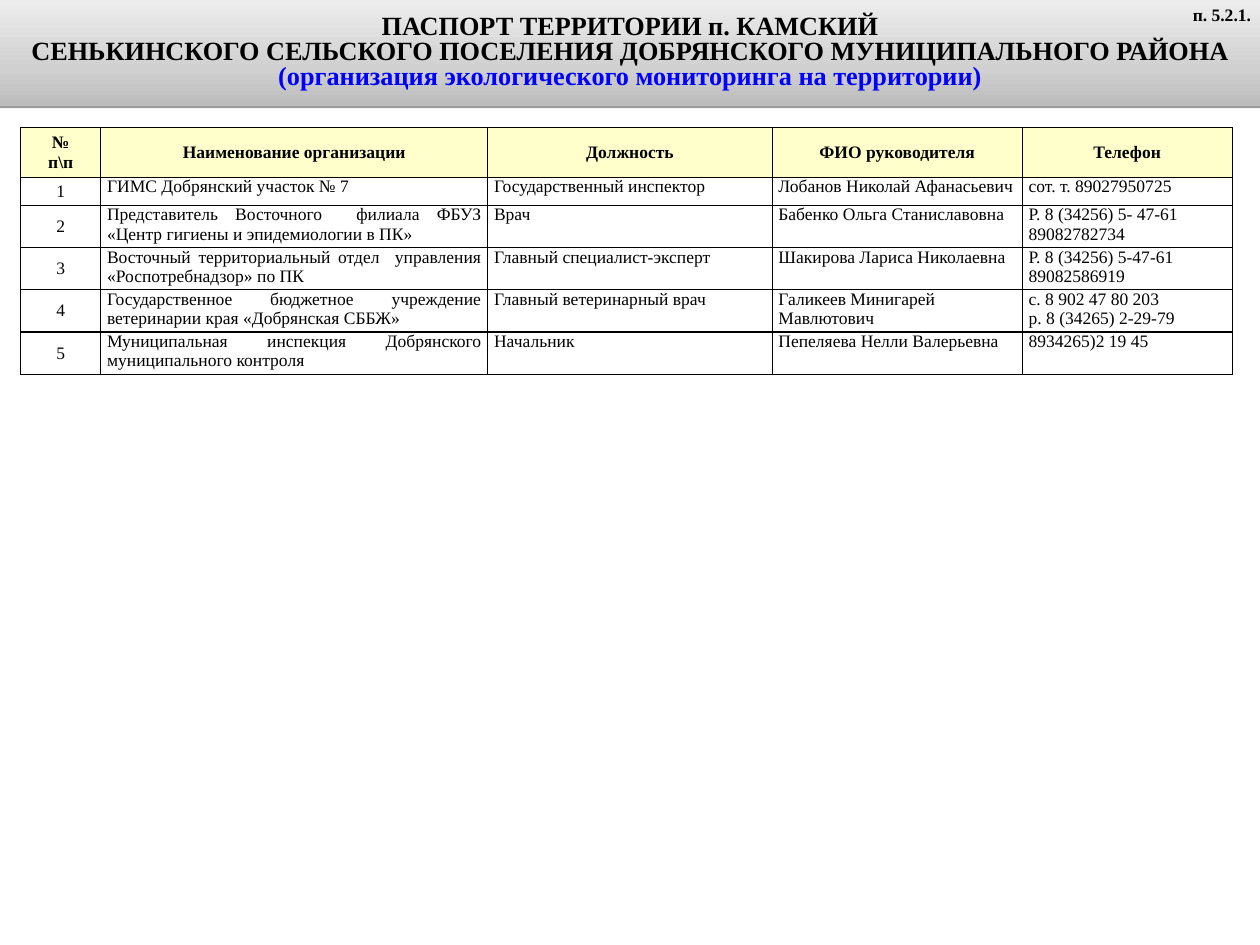
import pptx
import pptx.util
import pptx.oxml
import pptx.oxml.ns
import pptx.dml.color
import pptx.enum.text
from lxml import etree

Inches = pptx.util.Inches
Align = pptx.enum.text.PP_ALIGN
Anchor = pptx.enum.text.MSO_ANCHOR

FONT = "Times New Roman"
COLORS = {
    "text": "000000",
    "accent": "0000FF",
    "header": "FFFFCC",
    "body": "FFFFFF",
    "border": "000000",
    "shadow": "000000",
}
BAND_STOPS = [(0, "BCBCBC"), (35, "D0D0D0"), (100, "EDEDED")]
TITLE = [
    ("ПАСПОРТ ТЕРРИТОРИИ п. КАМСКИЙ", "text"),
    ("СЕНЬКИНСКОГО СЕЛЬСКОГО ПОСЕЛЕНИЯ ДОБРЯНСКОГО МУНИЦИПАЛЬНОГО РАЙОНА", "text"),
    ("(организация экологического мониторинга на территории)", "accent"),
]
SECTION = "п. 5.2.1."
HEADERS = ["№\nп\\п", "Наименование организации", "Должность", "ФИО руководителя", "Телефон"]
CONTACTS = [
    ("ГИМС Добрянский участок № 7", "Государственный инспектор",
     "Лобанов Николай Афанасьевич", "сот. т. 89027950725"),
    ("Представитель Восточного  филиала ФБУЗ «Центр гигиены и эпидемиологии в ПК»", "Врач",
     "Бабенко Ольга Станиславовна", "Р. 8 (34256) 5- 47-61\n89082782734"),
    ("Восточный территориальный отдел  управления «Роспотребнадзор» по ПК",
     "Главный специалист-эксперт",
     "Шакирова Лариса Николаевна", "Р. 8 (34256) 5-47-61\n89082586919"),
    ("Государственное бюджетное учреждение ветеринарии края «Добрянская СББЖ»",
     "Главный ветеринарный врач",
     "Галикеев Минигарей Мавлютович", "с. 8 902 47 80 203\nр. 8 (34265) 2-29-79"),
    ("Муниципальная инспекция Добрянского муниципального контроля", "Начальник",
     "Пепеляева Нелли Валерьевна", "8934265)2 19 45"),
]
COLUMN_WIDTHS = [0.89, 4.3, 3.16, 2.78, 2.33]
ROW_HEIGHTS = [0.55, 0.31] + [0.47] * 4
COLUMN_ALIGNS = [Align.CENTER, Align.JUSTIFY] + [Align.LEFT] * 3


def write(frame, lines, size, align, bold, spacing=None):
    for index, (text, color) in enumerate(lines):
        paragraph = frame.paragraphs[0] if index == 0 else frame.add_paragraph()
        paragraph.alignment = align
        paragraph.space_before = pptx.util.Pt(0)
        if spacing:
            paragraph.line_spacing = spacing
        run = paragraph.add_run()
        run.text = text
        run.font.name = FONT
        run.font.size = pptx.util.Pt(size)
        run.font.bold = bold
        run.font.color.rgb = pptx.dml.color.RGBColor.from_string(COLORS[color])


def element(xml):
    return pptx.oxml.parse_xml(xml.replace(">", f" {pptx.oxml.ns.nsdecls('a')}>", 1))


def style_band(shape):
    shape.fill.gradient()
    shape.fill.gradient_angle = 90
    stops = shape._element.spPr.find(".//" + pptx.oxml.ns.qn("a:gsLst"))
    for stop in list(stops):
        stops.remove(stop)
    for position, color in BAND_STOPS:
        stops.append(element(
            f'<a:gs pos="{position * 1000}"><a:srgbClr val="{color}"/></a:gs>'))
    shape.line.fill.background()
    shape._element.spPr.append(element(
        f'<a:effectLst><a:outerShdw blurRad="0" dist="{pptx.util.Pt(1.6)}" dir="5400000" '
        f'rotWithShape="0"><a:srgbClr val="{COLORS["shadow"]}"><a:alpha val="38000"/>'
        '</a:srgbClr></a:outerShdw></a:effectLst>'))


def set_borders(cell):
    properties = cell._tc.get_or_add_tcPr()
    for index, side in enumerate(("lnL", "lnR", "lnT", "lnB")):
        properties.insert(index, element(
            f'<a:{side} w="{pptx.util.Pt(1)}"><a:solidFill>'
            f'<a:srgbClr val="{COLORS["border"]}"/></a:solidFill></a:{side}>'))


def fill_cell(cell, text, row, column):
    is_header = row == 0
    centered = is_header or column == 0
    cell.fill.solid()
    cell.fill.fore_color.rgb = pptx.dml.color.RGBColor.from_string(
        COLORS["header" if is_header else "body"])
    cell.vertical_anchor = Anchor.MIDDLE if centered else Anchor.TOP
    cell.margin_left = cell.margin_right = Inches(0.03 if centered else 0.07)
    cell.margin_top = cell.margin_bottom = Inches(0.03 if centered else 0)
    lines = [(line, "text") for line in text.split("\n")]
    write(cell.text_frame, lines, 14, Align.CENTER if centered else COLUMN_ALIGNS[column], is_header)
    set_borders(cell)


def main():
    presentation = pptx.Presentation()
    presentation.slide_width, presentation.slide_height = Inches(14), Inches(10.5)
    slide = presentation.slides.add_slide(presentation.slide_layouts[5])

    title = slide.shapes.title
    title.left, title.top, title.width, title.height = 0, 0, Inches(14), Inches(1.18)
    style_band(title)
    title.text_frame.word_wrap = True
    title.text_frame.auto_size = pptx.enum.text.MSO_AUTO_SIZE.NONE
    title.text_frame.vertical_anchor = Anchor.MIDDLE
    write(title.text_frame, TITLE, 21, Align.CENTER, True, 0.8)

    section = slide.shapes.add_textbox(Inches(13.06), 0, Inches(0.94), Inches(0.33))
    section.text_frame.word_wrap = True
    section.text_frame.auto_size = pptx.enum.text.MSO_AUTO_SIZE.SHAPE_TO_FIT_TEXT
    write(section.text_frame, [(SECTION, "text")], 14, Align.RIGHT, True)

    rows = [HEADERS] + [(str(number), *contact) for number, contact in enumerate(CONTACTS, 1)]
    table = slide.shapes.add_table(
        len(rows), len(HEADERS), Inches(0.23), Inches(1.42),
        Inches(sum(COLUMN_WIDTHS)), Inches(sum(ROW_HEIGHTS))).table
    table.horz_banding = False
    for column, width in zip(table.columns, COLUMN_WIDTHS):
        column.width = Inches(width)
    for row, height in zip(table.rows, ROW_HEIGHTS):
        row.height = Inches(height)
    for row, texts in enumerate(rows):
        for column, text in enumerate(texts):
            fill_cell(table.cell(row, column), text, row, column)

    presentation.save("out.pptx")


if __name__ == "__main__":
    main()
